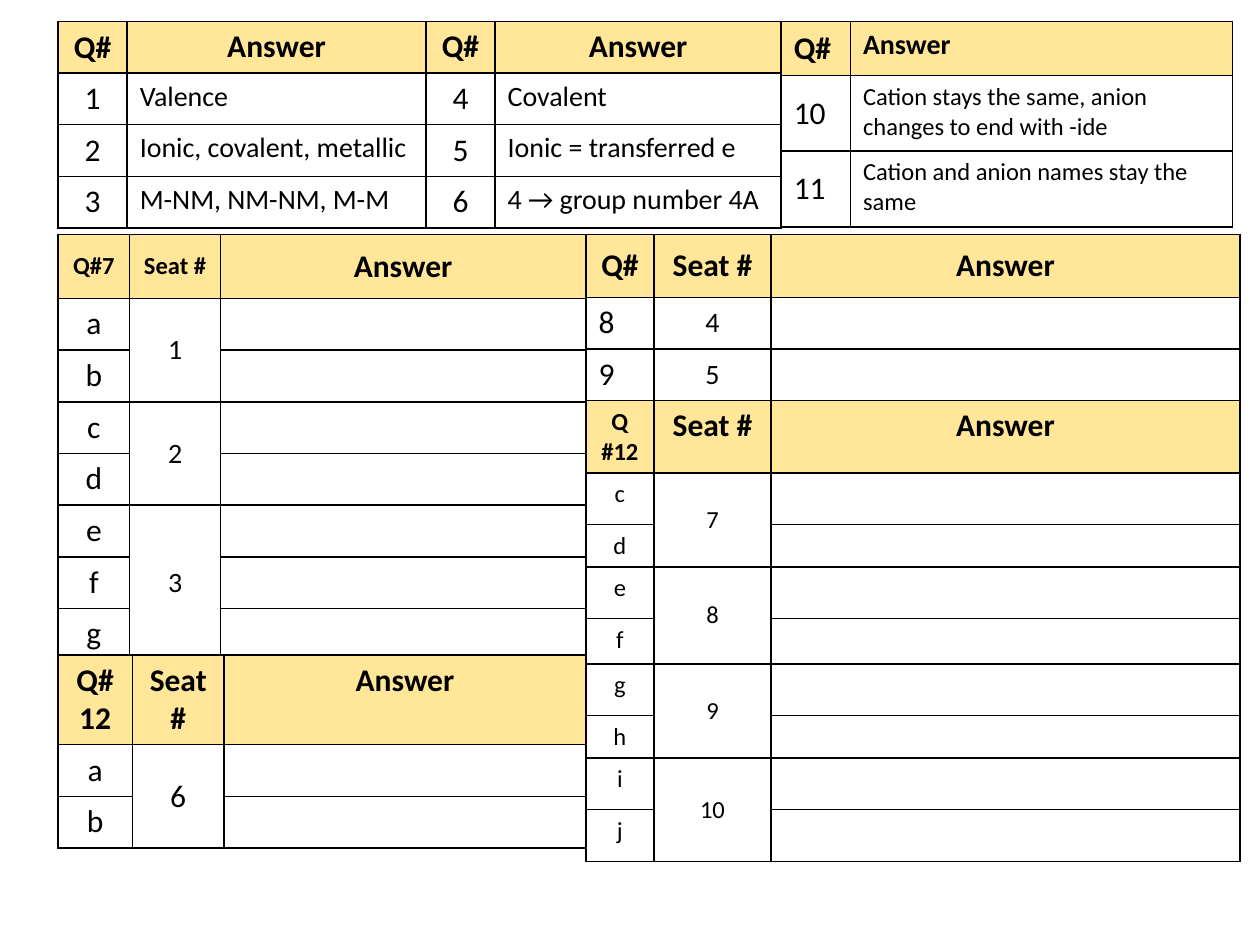
from lxml.etree import SubElement
from pptx import Presentation
from pptx.dml.color import RGBColor
from pptx.enum.text import MSO_ANCHOR, PP_ALIGN
from pptx.oxml.ns import qn
from pptx.util import Inches, Pt

COLORS = {"ink": "000000", "header": "FFE699", "white": "FFFFFF"}
FONT = "Calibri"

# Per column: text size and flags (b bold header, c centred, m middle)
STYLES = {
    "answer head": [(18, "bcm"), (18, "bc"), (18, "bc"), (18, "bc")],
    "answers": [(18, "cm"), (16, ""), (18, "c"), (16, "")],
    "naming head": [(18, "bm"), (16, "b")],
    "naming": [(18, "m"), (14, "")],
    "small head": [(14, "bcm"), (14, "bcm"), (18, "bcm")],
    "middle head": [(18, "bcm")] * 3,
    "top head": [(18, "bc")] * 3,
    "mixed head": [(14, "bc"), (18, "bc"), (18, "bc")],
    "letters": [(18, "c"), (16, "cm"), (14, "")],
    "big letters": [(18, "c"), (18, "cm"), (14, "")],
    "small letters": [(14, "c"), (14, "cm"), (14, "")],
    "numbers": [(18, "m"), (16, "cm"), (14, "")],
}

# Rows: height, style, texts; None continues the cell above
TABLES = [
    {"at": (0.46, 0.17), "columns": [0.55, 2.37, 0.55, 2.27], "rows": [
        (0.41, "answer head", ["Q#", "Answer", "Q#", "Answer"]),
        (0.41, "answers", ["1", "Valence", "4", "Covalent"]),
        (0.41, "answers", ["2", "Ionic, covalent, metallic", "5", "Ionic = transferred e"]),
        (0.41, "answers", ["3", "M-NM, NM-NM, M-M", "6", "4 → group number 4A"]),
    ]},
    {"at": (0.46, 1.86), "columns": [0.57, 0.72, 2.9], "rows": [
        (0.51, "small head", ["Q#7", "Seat #", "Answer"]),
        (0.41, "letters", ["a", "1", ""]),
        (0.41, "letters", ["b", None, ""]),
        (0.41, "letters", ["c", "2", ""]),
        (0.41, "letters", ["d", None, ""]),
        (0.41, "letters", ["e", "3", ""]),
        (0.41, "letters", ["f", None, ""]),
        (0.41, "letters", ["g", None, ""]),
    ]},
    {"at": (4.65, 1.86), "columns": [0.54, 0.93, 3.72], "rows": [
        (0.5, "middle head", ["Q#", "Seat #", "Answer"]),
        (0.41, "numbers", ["8", "4", ""]),
        (0.41, "numbers", ["9", "5", ""]),
        (0.41, "mixed head", ["Q\n#12", "Seat #", "Answer"]),
        (0.41, "small letters", ["c", "7", ""]),
        (0.29, "small letters", ["d", None, ""]),
        (0.41, "small letters", ["e", "8", ""]),
        (0.36, "small letters", ["f", None, ""]),
        (0.41, "small letters", ["g", "9", ""]),
        (0.28, "small letters", ["h", None, ""]),
        (0.41, "small letters", ["i", "10", ""]),
        (0.41, "small letters", ["j", None, ""]),
    ]},
    {"at": (0.46, 5.2), "columns": [0.59, 0.73, 2.87], "fill": "white", "rows": [
        (0.41, "top head", ["Q#12", "Seat #", "Answer"]),
        (0.41, "big letters", ["a", "6", ""]),
        (0.41, "big letters", ["b", None, ""]),
    ]},
    {"at": (6.2, 0.17), "columns": [0.55, 3.03], "rows": [
        (0.43, "naming head", ["Q#", "Answer"]),
        (0.6, "naming", ["10", "Cation stays the same, anion changes to end with -ide"]),
        (0.6, "naming", ["11", "Cation and anion names stay the same"]),
    ]},
]


def write_text(cell, text, *, size, bold=False, centred=False, middle=False):
    cell.vertical_anchor = MSO_ANCHOR.MIDDLE if middle else MSO_ANCHOR.TOP
    paragraph = cell.text_frame.paragraphs[0]
    paragraph.alignment = PP_ALIGN.CENTER if centred else PP_ALIGN.LEFT
    paragraph.text = text
    for run in paragraph.runs:
        run.font.name = FONT
        run.font.size = Pt(size)
        run.font.bold = bold
        run.font.color.rgb = RGBColor.from_string(COLORS["ink"])
    # Keeps blank cells from stretching their row
    SubElement(paragraph._p, qn("a:endParaRPr"), sz=str(size * 100))


def paint_cell(cell, fill):
    """Draw the four borders, then fill the cell or leave it clear."""
    properties = cell._tc.get_or_add_tcPr()
    for side in ("a:lnL", "a:lnR", "a:lnT", "a:lnB"):
        line = SubElement(properties, qn(side), w=str(Pt(1)))
        SubElement(SubElement(line, qn("a:solidFill")), qn("a:srgbClr"), val=COLORS["ink"])
    if fill:
        cell.fill.solid()
        cell.fill.fore_color.rgb = RGBColor.from_string(COLORS[fill])
    else:
        cell.fill.background()


def merge_down(table, rows):
    for column in range(len(table.columns)):
        start = 0
        for row in range(1, len(rows) + 1):
            if row < len(rows) and rows[row][2][column] is None:
                continue
            if row - start > 1:
                table.cell(start, column).merge(table.cell(row - 1, column))
            start = row


def add_answer_table(slide, content):
    rows, widths = content["rows"], content["columns"]
    left, top = content["at"]
    height = sum(row[0] for row in rows)
    table = slide.shapes.add_table(
        len(rows), len(widths), Inches(left), Inches(top),
        Inches(sum(widths)), Inches(height)).table
    table.first_row = table.horz_banding = False
    for column, width in zip(table.columns, widths):
        column.width = Inches(width)
    for index, (row_height, style, texts) in enumerate(rows):
        table.rows[index].height = Inches(row_height)
        for column, (text, (size, flags)) in enumerate(zip(texts, STYLES[style])):
            cell = table.cell(index, column)
            write_text(cell, text or "", size=size, bold="b" in flags,
                       centred="c" in flags, middle="m" in flags)
            paint_cell(cell, "header" if "b" in flags else content.get("fill"))
    merge_down(table, rows)


def main():
    presentation = Presentation()
    presentation.slide_width = Inches(10)
    presentation.slide_height = Inches(7.5)
    slide = presentation.slides.add_slide(presentation.slide_layouts[6])
    for content in TABLES:
        add_answer_table(slide, content)
    presentation.save("out.pptx")


if __name__ == "__main__":
    main()
